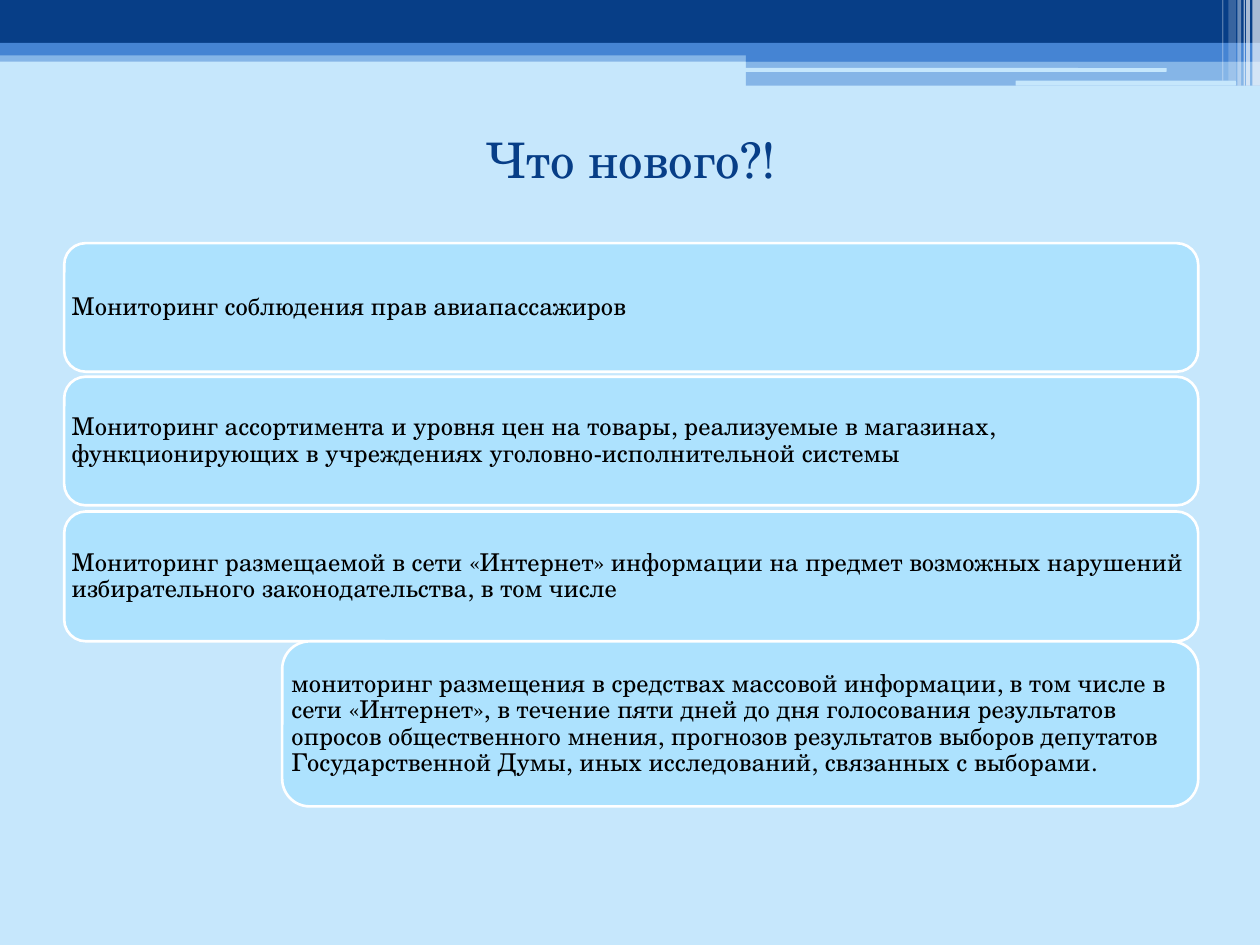
from lxml import etree
from pptx import Presentation
from pptx.dml.color import RGBColor
from pptx.enum.shapes import MSO_SHAPE
from pptx.enum.text import MSO_ANCHOR, PP_ALIGN
from pptx.oxml.ns import qn
from pptx.util import Inches, Pt

RECT, ROUNDED = MSO_SHAPE.RECTANGLE, MSO_SHAPE.ROUNDED_RECTANGLE
MIDDLE = MSO_ANCHOR.MIDDLE
LEFT, CENTER = PP_ALIGN.LEFT, PP_ALIGN.CENTER
TITLE_ONLY = 5
FONT = "TeX Gyre Schola"
COLORS = {"sky": "C6E7FC", "navy": "073E87", "blue": "4584D3",
          "white": "FFFFFF", "card": "ADE2FE", "text": "000000"}


def add_block(kind, box, color, opacity=100):
    """Add a filled shape without outline; opacity is in percent."""
    block = slide.shapes.add_shape(kind, *map(Inches, box))
    block.shadow.inherit = False
    block.fill.solid()
    block.fill.fore_color.rgb = RGBColor.from_string(COLORS[color])
    block.line.fill.background()
    if opacity < 100:
        fill_color = block.fill._xPr.find(qn("a:solidFill"))[0]
        etree.SubElement(fill_color, qn("a:alpha"), val=str(opacity * 1000))
    return block


def write(frame, text, size, color, align):
    frame.word_wrap = True
    frame.vertical_anchor = MIDDLE
    paragraph = frame.paragraphs[0]
    paragraph.alignment = align
    run = paragraph.add_run()
    run.text = text
    run.font.name = FONT
    run.font.size = Pt(size)
    run.font.color.rgb = RGBColor.from_string(COLORS[color])
    return paragraph


prs = Presentation()
prs.slide_width, prs.slide_height = Inches(10), Inches(7.5)
slide = prs.slides.add_slide(prs.slide_layouts[TITLE_ONLY])
slide.background.fill.solid()
slide.background.fill.fore_color.rgb = RGBColor.from_string(COLORS["sky"])

# Header bands
for kind, box, color, opacity in [
    (RECT, (0, 0.4, 10, 0.09), "blue", 50),
    (RECT, (0, 0, 10, 0.34), "navy", 100),
    (RECT, (0, 0.34, 10, 0.1), "blue", 100),
    (RECT, (5.92, 0.39, 4.08, 0.1), "blue", 100),
    (RECT, (5.92, 0.48, 4.08, 0.2), "blue", 50),
    (ROUNDED, (5.91, 0.54, 3.35, 0.03), "sky", 100),
    (ROUNDED, (8.06, 0.64, 1.75, 0.04), "sky", 100),
]:
    add_block(kind, box, color, opacity)

# Vertical stripes in the corner: left, width, height, opacity
for left, width, height, opacity in [
    (9.94, 0.06, 0.68, 65), (9.89, 0.03, 0.68, 65), (9.87, 0.01, 0.68, 60),
    (9.82, 0.03, 0.68, 40), (9.75, 0.06, 0.64, 20), (9.7, 0.01, 0.64, 30),
]:
    add_block(RECT, (left, 0, width, height), "white", opacity)

title = slide.shapes.title
title.left, title.top = Inches(0.51), Inches(0.68)
title.width, title.height = Inches(9), Inches(1.17)
write(title.text_frame, "Что нового?!", 28, "navy", CENTER)

# Monitoring topics, the last one indented under the third
for box, topic in [
    ((0.51, 1.93, 9, 1.02), "Мониторинг соблюдения прав авиапассажиров"),
    ((0.51, 2.99, 9, 1.02),
     "Мониторинг ассортимента и уровня цен на товары, реализуемые в магазинах, "
     "функционирующих в учреждениях уголовно-исполнительной системы"),
    ((0.51, 4.06, 9, 1.03),
     "Мониторинг размещаемой в сети «Интернет» информации на предмет возможных "
     "нарушений избирательного законодательства, в том числе"),
    ((2.24, 5.09, 7.27, 1.31),
     "мониторинг размещения в средствах массовой информации, в том числе в сети "
     "«Интернет», в течение пяти дней до дня голосования результатов опросов "
     "общественного мнения, прогнозов результатов выборов депутатов "
     "Государственной Думы, иных исследований, связанных с выборами."),
]:
    card = add_block(ROUNDED, box, "card")
    card.line.color.rgb = RGBColor.from_string(COLORS["white"])
    card.line.width = Pt(1.5)
    frame = card.text_frame
    frame.margin_left = frame.margin_right = Inches(0.01)
    frame.margin_top = frame.margin_bottom = Inches(0.01)
    write(frame, topic, 14, "text", LEFT).line_spacing = 0.9

prs.save("out.pptx")
